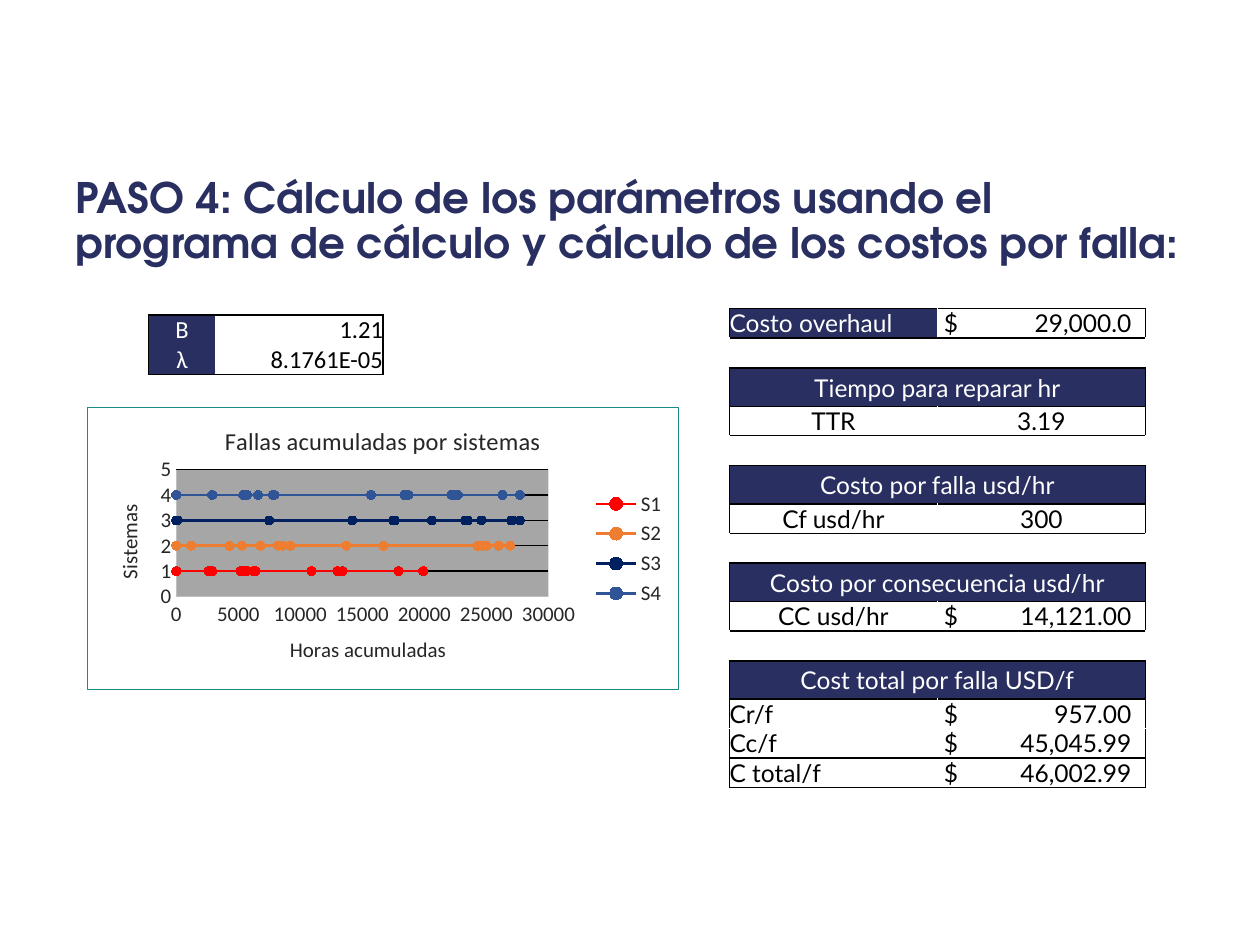
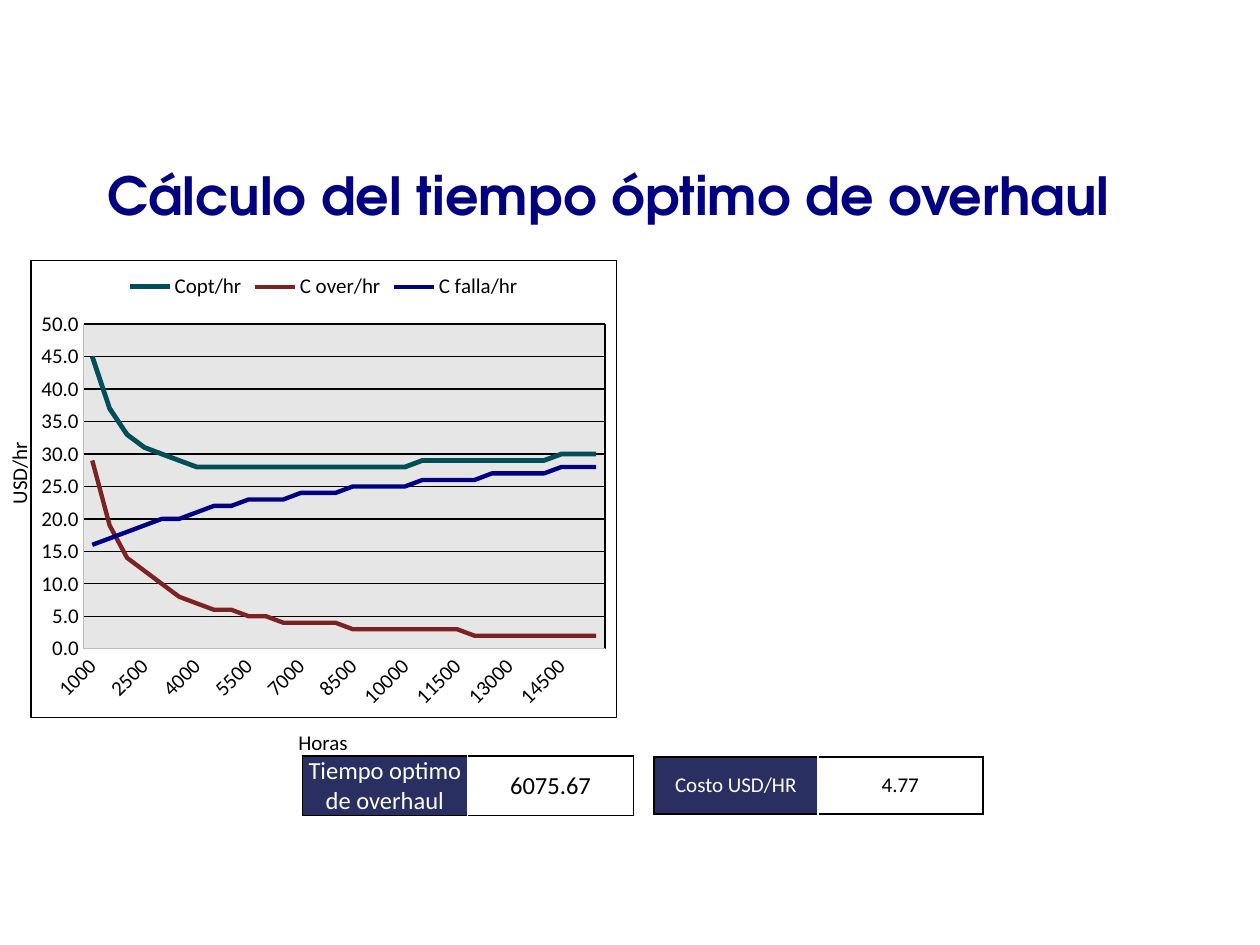
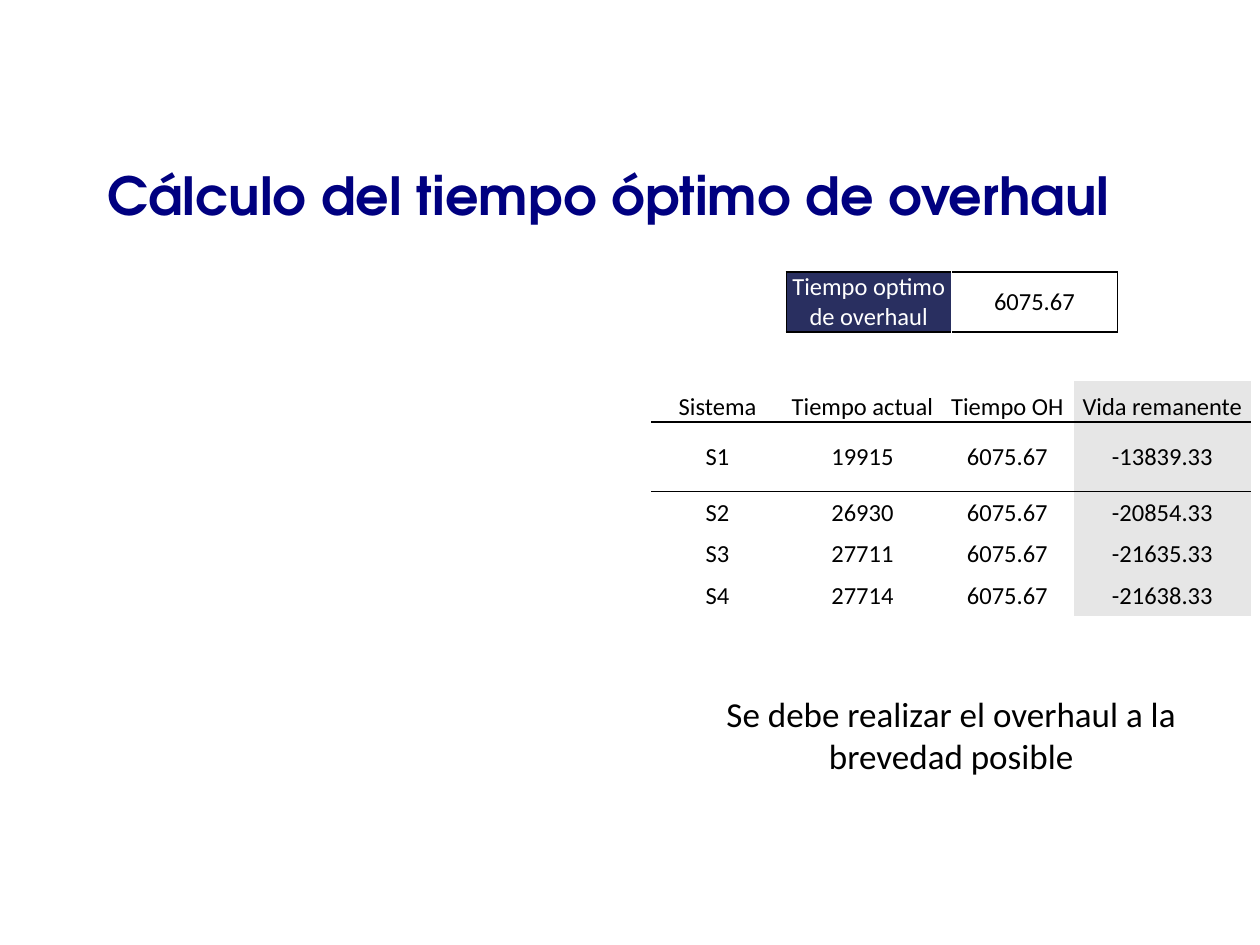
"""Build three slides on failure costs and the optimal overhaul time."""
from pptx import Presentation
from pptx.chart.data import CategoryChartData, XyChartData
from pptx.dml.color import RGBColor
from pptx.enum.chart import XL_CHART_TYPE as ChartType
from pptx.enum.chart import XL_LEGEND_POSITION as LegendPosition
from pptx.enum.chart import XL_MARKER_STYLE as MarkerStyle
from pptx.enum.chart import XL_TICK_MARK as TickMark
from pptx.enum.text import MSO_ANCHOR as Anchor
from pptx.enum.text import MSO_AUTO_SIZE as AutoSize
from pptx.enum.text import PP_ALIGN as Align
from pptx.oxml import parse_xml
from pptx.oxml.ns import nsdecls, qn
from pptx.util import Emu, Pt

NAVY = RGBColor(0x29, 0x2F, 0x60)
BLUE = RGBColor(0x00, 0x00, 0x80)
BLACK = RGBColor(0x00, 0x00, 0x00)
WHITE = RGBColor(0xFF, 0xFF, 0xFF)
INK = RGBColor(0x26, 0x26, 0x26)
SILVER = RGBColor(0xE6, 0xE6, 0xE6)
AXIS_GRAY = RGBColor(0xBF, 0xBF, 0xBF)
PLOT_GRAY = RGBColor(0xA6, 0xA6, 0xA6)
TEAL = RGBColor(0x17, 0x8C, 0x86)
DARK_TEAL = RGBColor(0x00, 0x4F, 0x58)
MAROON = RGBColor(0x7D, 0x22, 0x23)
RED = RGBColor(0xFF, 0x00, 0x00)
ORANGE = RGBColor(0xED, 0x7D, 0x31)
DEEP_BLUE = RGBColor(0x00, 0x20, 0x60)
STEEL_BLUE = RGBColor(0x2F, 0x55, 0x97)

TITLE_FONT, BODY_FONT, COST_FONT = "TeX Gyre Adventor", "Calibri", "Lato"
PX = 9144
NO_STYLE = "{2D5ABB26-0587-4C30-8999-92F81FD0307C}"

STEP_TITLE = ("PASO 4: Cálculo de los parámetros usando el programa de cálculo "
              "y cálculo de los costos por falla:")
OVERHAUL_TITLE = "Cálculo del tiempo óptimo de overhaul"
PARAMETERS = [("Β", "1.21"), ("λ", "8.1761E-05")]
COSTS = [
    ("Costo overhaul", "$\t29,000.0", Align.LEFT),
    (),
    ("Tiempo para reparar hr",),
    ("TTR", "3.19", Align.CENTER),
    (),
    ("Costo por falla usd/hr",),
    ("Cf usd/hr", "300", Align.CENTER),
    (),
    ("Costo por consecuencia usd/hr",),
    ("CC usd/hr", "$\t14,121.00", Align.CENTER),
    (),
    ("Cost total por falla USD/f",),
    ("Cr/f", "$\t957.00", Align.LEFT),
    ("Cc/f", "$\t45,045.99", Align.LEFT),
    ("C total/f", "$\t46,002.99", Align.LEFT),
]
FAILURES = [
    ("S1", RED, [0, 2600, 2800, 2900, 5200, 5200, 5200, 5400, 5400, 5700, 6200, 6300,
                 6400, 10900, 13000, 13400, 13400, 17900, 19900]),
    ("S2", ORANGE, [0, 1200, 4300, 5300, 6800, 8200, 8600, 9200, 13700, 16700, 24300,
                    24700, 25000, 25000, 25000, 26000, 26000, 26000, 26900]),
    ("S3", DEEP_BLUE, [0, 100, 7500, 7500, 14200, 17500, 17500, 17600, 20600, 20600,
                       23300, 23400, 23500, 24600, 27000, 27100, 27100, 27700, 27700]),
    ("S4", STEEL_BLUE, [0, 2900, 5400, 5700, 6600, 7800, 7900, 15700, 18400, 18400,
                        18700, 22200, 22500, 22700, 26300, 27700]),
]
HOURS = range(1000, 15501, 500)
COST_CURVES = [
    ("Copt/hr", DARK_TEAL, 2.75,
     [45, 37, 33, 31, 30, 29, 28, 28, 28, 28, 28, 28, 28, 28, 28,
      28, 28, 28, 28, 29, 29, 29, 29, 29, 29, 29, 29, 30, 30, 30]),
    ("C over/hr", MAROON, 2.5,
     [29, 19, 14, 12, 10, 8, 7, 6, 6, 5, 5, 4, 4, 4, 4,
      3, 3, 3, 3, 3, 3, 3, 2, 2, 2, 2, 2, 2, 2, 2]),
    ("C falla/hr", BLUE, 2.5,
     [16, 17, 18, 19, 20, 20, 21, 22, 22, 23, 23, 23, 24, 24, 24,
      25, 25, 25, 25, 26, 26, 26, 26, 27, 27, 27, 27, 28, 28, 28]),
]
OPTIMAL_TIME = ("Tiempo optimo de overhaul", "6075.67")
HOURLY_COST = ("Costo USD/HR", "4.77")
REMAINING_LIFE = [
    ("Sistema", "Tiempo actual", "Tiempo OH", "Vida remanente"),
    ("S1", "19915", "6075.67", "-13839.33"),
    ("S2", "26930", "6075.67", "-20854.33"),
    ("S3", "27711", "6075.67", "-21635.33"),
    ("S4", "27714", "6075.67", "-21638.33"),
]
CONCLUSION = "Se debe realizar el overhaul a la brevedad posible"


def px(*values):
    return [Emu(value * PX) for value in values]


def style_font(font, size, color, name=BODY_FONT, bold=False):
    font.size, font.name, font.bold = Pt(size), name, bold
    font.color.rgb = color


def add_run(paragraph, text, *style):
    run = paragraph.add_run()
    run.text = text
    style_font(run.font, *style)


def add_titled_slide(presentation, text, box, size, color):
    slide = presentation.slides.add_slide(presentation.slide_layouts[5])
    title = slide.shapes.title
    title.left, title.top, title.width, title.height = px(*box)
    frame = title.text_frame
    frame.auto_size, frame.vertical_anchor = AutoSize.NONE, Anchor.MIDDLE
    paragraph = frame.paragraphs[0]
    paragraph.alignment, paragraph.line_spacing = Align.LEFT, 0.9
    add_run(paragraph, text, size, color, TITLE_FONT, True)
    return slide


def add_overhaul_slide(presentation):
    return add_titled_slide(presentation, OVERHAUL_TITLE, (75, 110, 910, 95), 30, BLUE)


def add_label(slide, text, box, size, alignment=Align.LEFT, wrap=False, rotation=0):
    label = slide.shapes.add_textbox(*px(*box))
    label.rotation = rotation
    label.text_frame.word_wrap = wrap
    label.text_frame.auto_size = AutoSize.SHAPE_TO_FIT_TEXT
    paragraph = label.text_frame.paragraphs[0]
    paragraph.alignment = alignment
    add_run(paragraph, text, size, BLACK)


def add_plain_table(slide, left, top, widths, heights):
    frame = slide.shapes.add_table(len(heights), len(widths),
                                   *px(left, top, sum(widths), sum(heights)))
    table = frame.table
    table.first_row = table.horz_banding = False
    table._tbl.tblPr.find(qn("a:tableStyleId")).text = NO_STYLE
    for column, width in zip(table.columns, widths):
        column.width = Emu(width * PX)
    for row, height in zip(table.rows, heights):
        row.height = Emu(height * PX)
    return table


def set_borders(cell, **colors):
    properties = cell._tc.get_or_add_tcPr()
    for side in "LRTB":
        if colors.get(side) is not None:
            properties.append(parse_xml(
                f'<a:ln{side} {nsdecls("a")} w="12700"><a:solidFill>'
                f'<a:srgbClr val="{colors[side]}"/></a:solidFill></a:ln{side}>'))


def fill_cell(cell, text, size=14, color=BLACK, font=BODY_FONT, fill=None,
              alignment=Align.CENTER, anchor=Anchor.MIDDLE, margins=(0, 0, 0, 0)):
    cell.margin_left, cell.margin_top, cell.margin_right, cell.margin_bottom = px(*margins)
    cell.vertical_anchor = anchor
    if fill is None:
        cell.fill.background()
    else:
        cell.fill.solid()
        cell.fill.fore_color.rgb = fill
    paragraph = cell.text_frame.paragraphs[0]
    paragraph.alignment = alignment
    if "\t" in text:
        paragraph._p.get_or_add_pPr().append(parse_xml(
            f'<a:tabLst {nsdecls("a")}><a:tab pos="{149 * PX}" algn="r"/></a:tabLst>'))
    if text:
        add_run(paragraph, text, size, color, font)
    else:
        paragraph._p.append(parse_xml(f'<a:endParaRPr {nsdecls("a")} sz="{size * 100}"/>'))


def add_result(slide, left, top, widths, result, size):
    table = add_plain_table(slide, left, top, widths, [45])
    label, value = table.cell(0, 0), table.cell(0, 1)
    set_borders(label, L=BLACK, R=WHITE, T=BLACK, B=BLACK)
    set_borders(value, L=WHITE, R=BLACK, T=BLACK, B=BLACK)
    fill_cell(label, result[0], size, WHITE, fill=NAVY)
    fill_cell(value, result[1], size)


def add_parameters(slide):
    table = add_plain_table(slide, 118, 250, [53, 133], [23, 23])
    for row, (name, value) in enumerate(PARAMETERS):
        edges = {"T": BLACK} if row == 0 else {"B": BLACK}
        label, number = table.cell(row, 0), table.cell(row, 1)
        set_borders(label, L=BLACK, **edges)
        set_borders(number, R=BLACK, **edges)
        fill_cell(label, name, color=WHITE, fill=NAVY, anchor=Anchor.BOTTOM)
        fill_cell(number, value, alignment=Align.RIGHT, anchor=Anchor.BOTTOM)


def add_costs(slide):
    heights = [30 if len(row) == 1 else 23 for row in COSTS]
    table = add_plain_table(slide, 579, 245, [165, 165], heights)
    for index, row in enumerate(COSTS):
        left, right = table.cell(index, 0), table.cell(index, 1)
        outer = BLACK if row else WHITE
        inner = BLACK if len(row) == 1 else WHITE
        first = row[0] if row else ""
        top = WHITE if first == "Cc/f" else BLACK
        bottom = WHITE if first == "Cr/f" else BLACK
        set_borders(left, L=outer, R=inner, T=top, B=bottom)
        set_borders(right, L=inner, R=outer, T=top, B=bottom)
        if len(row) == 1:
            left.merge(right)
            fill_cell(left, first, 14, WHITE, COST_FONT, NAVY,
                      anchor=Anchor.BOTTOM, margins=(7, 4, 7, 3))
        elif row:
            _, value, alignment = row
            heading = index == 0
            fill_cell(left, first, 14, WHITE if heading else BLACK, COST_FONT,
                      NAVY if heading else None, alignment,
                      Anchor.TOP if heading else Anchor.BOTTOM)
            money = "\t" in value
            fill_cell(right, value, font=COST_FONT, anchor=Anchor.BOTTOM,
                      alignment=Align.LEFT if money else Align.CENTER,
                      margins=(5 if money else 0, 0, 0, 0))
        else:
            fill_cell(left, "")
            fill_cell(right, "")


def add_remaining_life(slide):
    table = add_plain_table(slide, 517, 302, [105, 125, 105, 141], [33, 55, 33, 33, 33])
    for row, values in enumerate(REMAINING_LIFE):
        for column, value in enumerate(values):
            cell = table.cell(row, column)
            set_borders(cell, T=BLACK if row == 1 else None, B=BLACK if row == 0 else None)
            fill_cell(cell, value, fill=SILVER if column == 3 else None,
                      anchor=Anchor.MIDDLE if row else Anchor.BOTTOM, margins=(1, 1, 1, 0))


def area_format(fill, border):
    def paint(color):
        if color is None:
            return "<a:noFill/>"
        return f'<a:solidFill><a:srgbClr val="{color}"/></a:solidFill>'
    return parse_xml(f'<c:spPr {nsdecls("c", "a")}>{paint(fill)}'
                     f'<a:ln w="9525">{paint(border)}</a:ln></c:spPr>')


def add_styled_chart(slide, kind, box, data, color, legend, plot, fill, border,
                     plot_fill, plot_border=None):
    chart = slide.shapes.add_chart(kind, *px(*box), data).chart
    style_font(chart.font, 12, color)
    chart.has_title = False
    chart.has_legend = True
    chart.legend.position, chart.legend.include_in_layout = legend, False
    style_font(chart.legend.font, 12, color)
    for axis in (chart.category_axis, chart.value_axis):
        axis.major_tick_mark = axis.minor_tick_mark = TickMark.NONE
        axis.format.line.color.rgb = AXIS_GRAY
        axis.format.line.width = Pt(0.75)
        style_font(axis.tick_labels.font, 12, color)
    chart.category_axis.has_major_gridlines = False
    chart.value_axis.has_major_gridlines = True
    grid = chart.value_axis.major_gridlines.format.line
    grid.color.rgb, grid.width = BLACK, Pt(0.75)
    chart_element = chart._chartSpace.find(qn("c:chart"))
    chart_element.addnext(area_format(fill, border))
    plot_area = chart_element.find(qn("c:plotArea"))
    for layout in plot_area.findall(qn("c:layout")):
        plot_area.remove(layout)
    places = "".join(f'<c:{name} val="{value}"/>' for name, value in zip("xywh", plot))
    plot_area.insert(0, parse_xml(
        f'<c:layout {nsdecls("c")}><c:manualLayout><c:layoutTarget val="inner"/>'
        f'<c:xMode val="edge"/><c:yMode val="edge"/>{places}</c:manualLayout></c:layout>'))
    plot_area.append(area_format(plot_fill, plot_border))
    chart.plots[0].vary_by_categories = False
    return chart


def add_failure_chart(slide):
    data = XyChartData()
    for level, (name, _, hours) in enumerate(FAILURES, 1):
        series = data.add_series(name)
        for hour in hours:
            series.add_data_point(hour, level)
    chart = add_styled_chart(slide, ChartType.XY_SCATTER_SMOOTH, (69, 323, 470, 225), data,
                             INK, LegendPosition.RIGHT, (0.15, 0.22, 0.63, 0.45),
                             None, TEAL, PLOT_GRAY)
    chart.has_title = True
    titles = [(chart.chart_title, "Fallas acumuladas por sistemas", 14),
              (chart.category_axis.axis_title, "Horas acumuladas", 12),
              (chart.value_axis.axis_title, "Sistemas", 12)]
    for title, text, size in titles:
        add_run(title.text_frame.paragraphs[0], text, size, INK)
    chart.category_axis.minimum_scale = 0
    chart.value_axis.major_unit = 1
    for series, (_, color, _) in zip(chart.plots[0].series, FAILURES):
        series.smooth = True
        series.format.line.color.rgb = color
        series.format.line.width = Pt(1.5)
        series.marker.style, series.marker.size = MarkerStyle.CIRCLE, 5
        series.marker.format.fill.solid()
        series.marker.format.fill.fore_color.rgb = color
        series.marker.format.line.color.rgb = color


def add_cost_chart(slide):
    data = CategoryChartData()
    data.categories = [str(hour) for hour in HOURS]
    for name, _, _, values in COST_CURVES:
        data.add_series(name, values)
    chart = add_styled_chart(slide, ChartType.LINE, (24, 206, 466, 364), data, BLACK,
                             LegendPosition.TOP, (0.09, 0.14, 0.89, 0.71),
                             WHITE, BLACK, SILVER, BLACK)
    chart.value_axis.tick_labels.number_format = "0.0"
    chart.value_axis.tick_labels.number_format_is_linked = False
    axis = chart.category_axis._element
    axis.find(qn("c:txPr")).find(qn("a:bodyPr")).set("rot", "-2700000")
    axis.find(qn("c:noMultiLvlLbl")).addprevious(
        parse_xml(f'<c:tickLblSkip {nsdecls("c")} val="3"/>'))
    for series, (_, color, width, _) in zip(chart.plots[0].series, COST_CURVES):
        series.smooth = False
        series.format.line.color.rgb = color
        series.format.line.width = Pt(width)
        series.marker.style = MarkerStyle.NONE


def main():
    presentation = Presentation()
    presentation.slide_width, presentation.slide_height = px(1000, 750)

    slide = add_titled_slide(presentation, STEP_TITLE, (50, 129, 910, 95), 24, NAVY)
    add_parameters(slide)
    add_costs(slide)
    add_failure_chart(slide)

    slide = add_overhaul_slide(presentation)
    add_cost_chart(slide)
    add_result(slide, 240, 600, [131, 132], OPTIMAL_TIME, 14)
    add_result(slide, 519, 601, [130, 131], HOURLY_COST, 12)
    add_label(slide, "Horas", (227, 574, 60, 30), 12)
    add_label(slide, "USD/hr", (-20, 360, 70, 30), 12, rotation=270)

    slide = add_overhaul_slide(presentation)
    add_result(slide, 624, 216, [131, 132], OPTIMAL_TIME, 14)
    add_remaining_life(slide)
    add_label(slide, CONCLUSION, (562, 545, 386, 77), 20, Align.CENTER, wrap=True)

    presentation.save("out.pptx")


if __name__ == "__main__":
    main()
